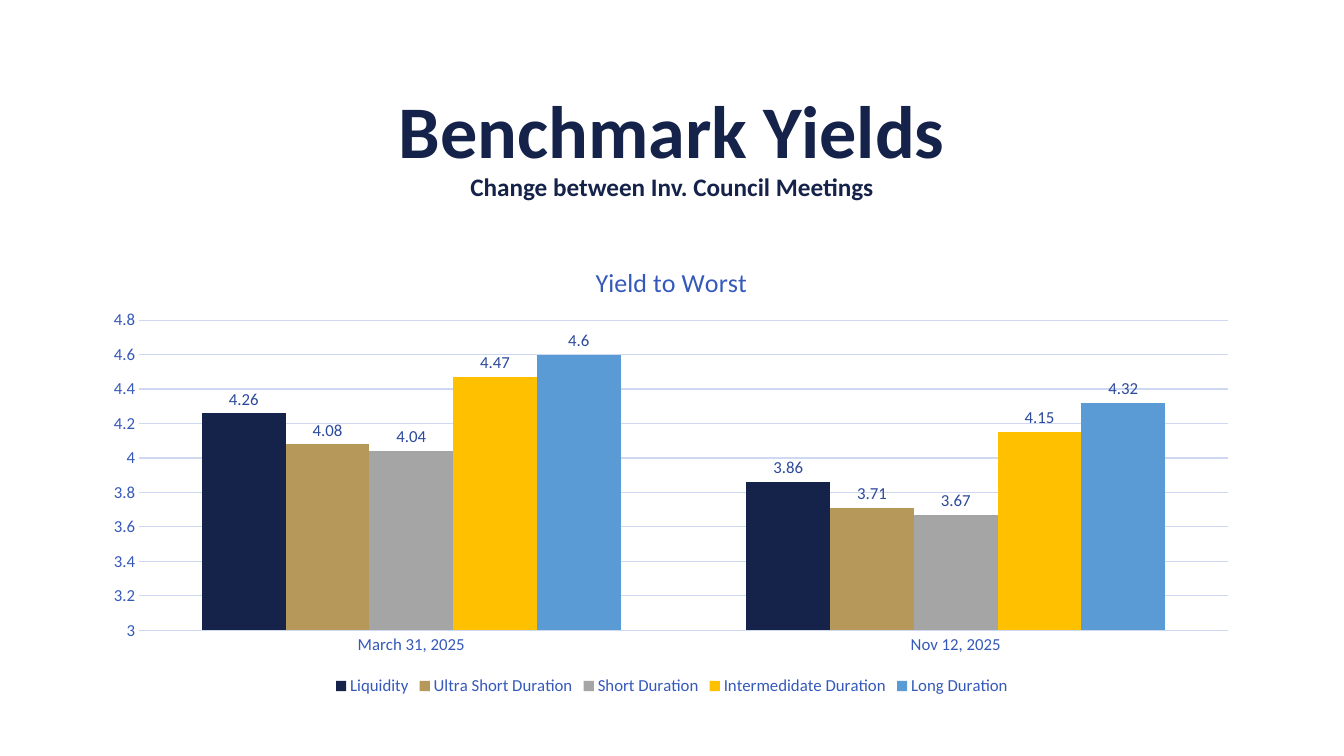
import pptx
import pptx.util
import pptx.chart.data
import pptx.dml.color
import pptx.enum.chart
import pptx.enum.text
import pptx.oxml

COLORS = {
    "navy": "152249",
    "axis": "3559BB",
    "label": "2C499B",
    "grid": "CFD8F1",
}
PERIODS = ["March 31, 2025", "Nov 12, 2025"]
YIELDS = [
    ("Liquidity", (4.26, 3.86), "15234A"),
    ("Ultra Short Duration", (4.08, 3.71), "B5985A"),
    ("Short Duration", (4.04, 3.67), "A5A5A5"),
    ("Intermedidate Duration", (4.47, 4.15), "FFC000"),
    ("Long Duration", (4.6, 4.32), "5B9BD5"),
]


def style_font(font, size, color, bold=False):
    font.name = "Calibri"
    font.size = pptx.util.Pt(size)
    font.bold = bold
    font.color.rgb = pptx.dml.color.RGBColor.from_string(color)


def place_in_chart(element, index, target, shares):
    for old in element.xpath("./c:layout"):
        element.remove(old)
    modes = "".join(f'<c:{side}Mode val="edge"/>' for side in "xy")
    sizes = "".join(f'<c:{side} val="{share}"/>' for side, share in shares.items())
    element.insert(index, pptx.oxml.parse_xml(
        '<c:layout xmlns:c="http://schemas.openxmlformats.org/drawingml/2006/chart">'
        f"<c:manualLayout>{target}{modes}{sizes}</c:manualLayout></c:layout>"))


deck = pptx.Presentation()
deck.slide_width = pptx.util.Inches(13.33)
deck.slide_height = pptx.util.Inches(7.5)
slide = deck.slides.add_slide(deck.slide_layouts[5])

left = round(deck.slide_width * 0.069)
width = deck.slide_width - 2 * left

title = slide.shapes.title
title.left, title.width = left, width
title.top = round(deck.slide_height * 0.1)
title.height = round(deck.slide_height * 0.193)
frame = title.text_frame
frame.word_wrap = True
frame.auto_size = pptx.enum.text.MSO_AUTO_SIZE.NONE
frame.vertical_anchor = pptx.enum.text.MSO_ANCHOR.MIDDLE
para = frame.paragraphs[0]
para.alignment = pptx.enum.text.PP_ALIGN.CENTER
para.line_spacing = 0.9
span = para.add_run()
span.text = "Benchmark Yields"
style_font(span.font, 53, COLORS["navy"], True)
para.add_line_break()
span = para.add_run()
span.text = "Change between Inv. Council Meetings"
style_font(span.font, 18, COLORS["navy"], True)

data = pptx.chart.data.CategoryChartData()
data.categories = PERIODS
for name, values, color in YIELDS:
    data.add_series(name, values)
chart = slide.shapes.add_chart(
    pptx.enum.chart.XL_CHART_TYPE.COLUMN_CLUSTERED,
    left, round(deck.slide_height * 0.313),
    width, round(deck.slide_height * 0.613), data).chart
style_font(chart.font, 10, COLORS["navy"])

chart.has_title = True
heading = chart.chart_title.text_frame.paragraphs[0].add_run()
heading.text = "Yield to Worst"
style_font(heading.font, 18.6, COLORS["axis"])
chart.chart_title.include_in_layout = False
place_in_chart(chart.chart_title._element, 1, "", {"x": 0.43, "y": 0.05})

chart.has_legend = True
chart.legend.position = pptx.enum.chart.XL_LEGEND_POSITION.BOTTOM
chart.legend.include_in_layout = False
style_font(chart.legend.font, 12, COLORS["axis"])

for axis in (chart.category_axis, chart.value_axis):
    axis.major_tick_mark = pptx.enum.chart.XL_TICK_MARK.NONE
    axis.minor_tick_mark = pptx.enum.chart.XL_TICK_MARK.NONE
    axis.format.line.fill.background()
    style_font(axis.tick_labels.font, 12, COLORS["axis"])

scale = chart.value_axis
scale.minimum_scale, scale.maximum_scale, scale.major_unit = 3, 4.8, 0.2
scale.has_major_gridlines = True
grid_line = scale.major_gridlines.format.line
grid_line.width = pptx.util.Pt(0.75)
grid_line.color.rgb = pptx.dml.color.RGBColor.from_string(COLORS["grid"])

plot = chart.plots[0]
plot.gap_width = 150
plot.overlap = 0
plot.vary_by_categories = False
for series, (name, values, color) in zip(plot.series, YIELDS):
    series.format.fill.solid()
    series.format.fill.fore_color.rgb = pptx.dml.color.RGBColor.from_string(color)
    labels = series.data_labels
    labels.show_value = True
    labels.position = pptx.enum.chart.XL_LABEL_POSITION.OUTSIDE_END
    style_font(labels.font, 12, COLORS["label"])

plot_area = chart._chartSpace.xpath("./c:chart/c:plotArea")[0]
place_in_chart(plot_area, 0, '<c:layoutTarget val="inner"/>',
               {"x": 0.04, "y": 0.18, "w": 0.94, "h": 0.67})

deck.save("out.pptx")
